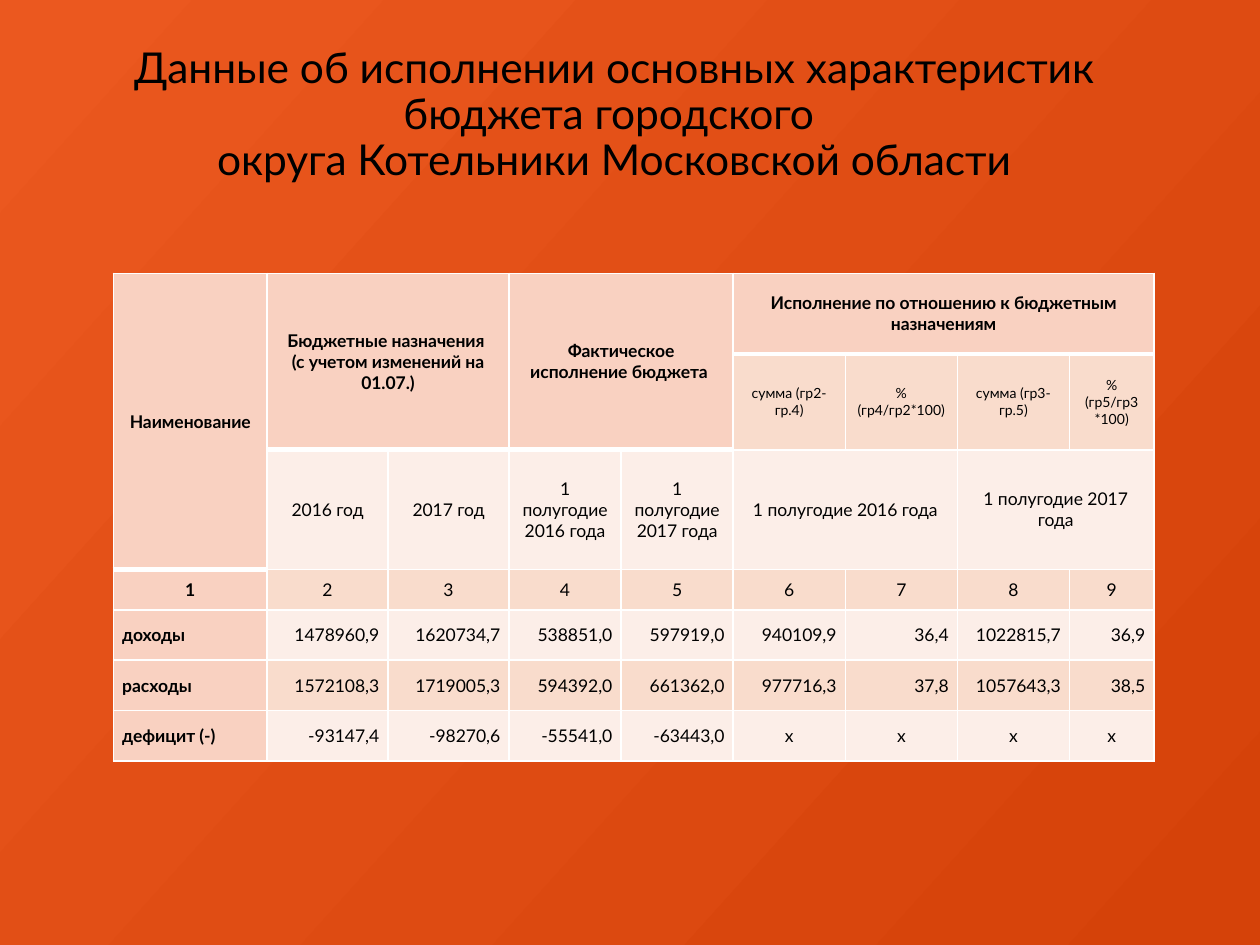
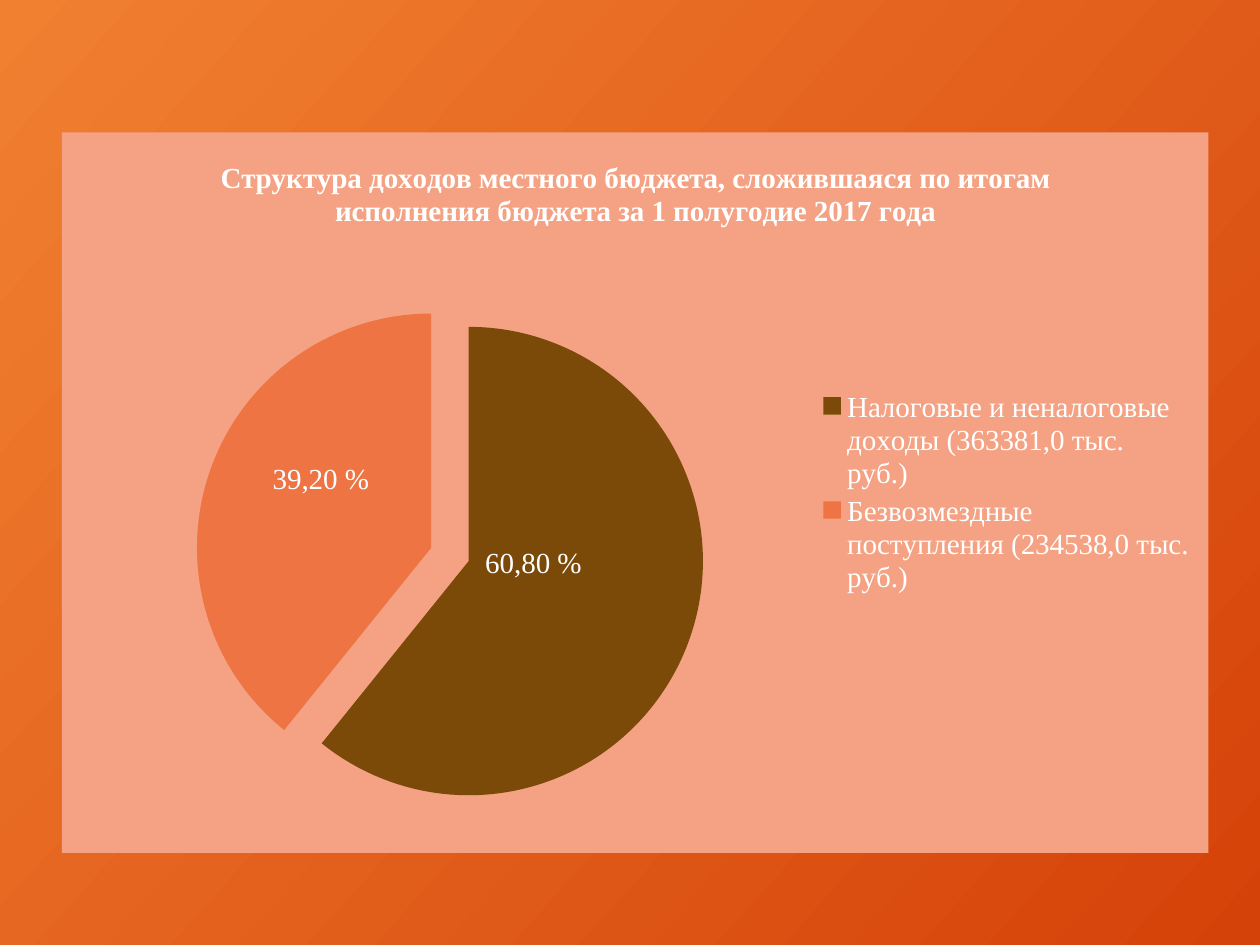
from lxml import etree
from pptx import Presentation
from pptx.chart.data import CategoryChartData
from pptx.dml.color import RGBColor
from pptx.enum.chart import XL_CHART_TYPE as ChartType
from pptx.enum.chart import XL_LABEL_POSITION as LabelPosition
from pptx.enum.chart import XL_LEGEND_POSITION as LegendPosition
from pptx.enum.text import MSO_ANCHOR as Anchor
from pptx.enum.text import PP_ALIGN as Align
from pptx.oxml import parse_xml
from pptx.oxml.ns import nsdecls, qn
from pptx.util import Inches, Pt

COLORS = {
    "text": "000000", "light": "FFFFFF", "red": "EB581F", "orange": "F18031",
    "deep": "D54209", "head": "F9D1C1", "band": "F9DCCC", "pale": "FCEEE8",
    "panel": "F4A283", "tax": "7B4A08", "grants": "EE7444",
}
SANS, SERIF = "Lato", "Times New Roman"
CHART_SIZE = 16.6


def rgb(name):
    return RGBColor.from_string(COLORS[name])


def chart_element(tag, **attributes):
    element = etree.Element(qn(f"c:{tag}"))
    for name, value in attributes.items():
        element.set(name, str(value))
    return element


def manual_layout(**values):
    layout = chart_element("layout")
    manual = etree.SubElement(layout, qn("c:manualLayout"))
    for name, value in values.items():
        manual.append(chart_element(name, val=value))
    return layout


class Deck:
    def __init__(self):
        self.presentation = Presentation()
        self.presentation.slide_width = Inches(10)
        self.presentation.slide_height = Inches(7.5)
        self.slide = None

    def add_slide(self, start_color):
        self.slide = self.presentation.slides.add_slide(self.presentation.slide_layouts[6])
        fill = self.slide.background.fill
        fill.gradient()
        fill.gradient_angle = 318
        for stop, name, position in zip(fill.gradient_stops, (start_color, "deep"), (0, 1)):
            stop.color.rgb = rgb(name)
            stop.position = position

    def style_font(self, font, size, color="text", family=SANS, bold=False):
        font.size = Pt(size)
        font.name = family
        font.bold = bold
        font.color.rgb = rgb(color)

    def add_run(self, paragraph, text, size, **style):
        run = paragraph.add_run()
        run.text = text
        self.style_font(run.font, size, **style)

    def title(self, lines, left, top, width, height):
        box = self.slide.shapes.add_textbox(*map(Inches, (left, top, width, height)))
        frame = box.text_frame
        frame.word_wrap = True
        frame.vertical_anchor = Anchor.MIDDLE
        paragraph = frame.paragraphs[0]
        paragraph.alignment = Align.CENTER
        paragraph.line_spacing = 0.9
        for index, line in enumerate(lines):
            if index:
                paragraph.add_line_break()
            self.add_run(paragraph, line, 24.3)

    def table(self, left, top, columns, rows):
        frame = self.slide.shapes.add_table(
            len(rows), len(columns), *map(Inches, (left, top, sum(columns), sum(rows))))
        table = frame.table
        for column, width in zip(table.columns, columns):
            column.width = Inches(width)
        for row, height in zip(table.rows, rows):
            row.height = Inches(height)
        return table

    def borders(self, cell, bottom):
        properties = cell._tc.get_or_add_tcPr()
        for side, width in (("L", 1), ("R", 1), ("T", 1), ("B", bottom)):
            properties.append(parse_xml(
                f'<a:ln{side} {nsdecls("a")} w="{Pt(width)}"><a:solidFill>'
                f'<a:srgbClr val="{COLORS["light"]}"/></a:solidFill></a:ln{side}>'))

    def cell(self, cell, text, fill, size=10, align=Align.CENTER, bold=False, bottom=1):
        self.borders(cell, bottom)
        cell.fill.solid()
        cell.fill.fore_color.rgb = rgb(fill)
        cell.vertical_anchor = Anchor.MIDDLE
        cell.margin_left = cell.margin_right = Inches(0.07)
        cell.margin_top = cell.margin_bottom = 0
        frame = cell.text_frame
        for index, line in enumerate(text.split("\n") if text else []):
            paragraph = frame.add_paragraph() if index else frame.paragraphs[0]
            paragraph.alignment = align
            self.add_run(paragraph, line, size, bold=bold)

    def pie(self, title, slices, left, top, width, height):
        data = CategoryChartData()
        data.categories = [part["name"] for part in slices]
        data.add_series("Series 1", [part["value"] for part in slices])
        chart = self.slide.shapes.add_chart(
            ChartType.PIE, *map(Inches, (left, top, width, height)), data).chart
        self.style_font(chart.font, 10, "light")
        chart.element.find(qn("c:txPr")).addprevious(parse_xml(
            f'<c:spPr {nsdecls("c", "a")}><a:solidFill><a:srgbClr val="{COLORS["panel"]}"/>'
            '</a:solidFill><a:ln><a:noFill/></a:ln></c:spPr>'))
        serif = {"size": CHART_SIZE, "color": "light", "family": SERIF}

        chart.has_title = True
        self.add_run(chart.chart_title.text_frame.paragraphs[0], title, bold=True, **serif)
        chart.has_legend = True
        legend = chart.legend
        legend.position = LegendPosition.RIGHT
        legend.include_in_layout = False
        self.style_font(legend.font, **serif)

        area = chart.element.find(".//" + qn("c:plotArea"))
        for layout in area.findall(qn("c:layout")):
            area.remove(layout)
        area.insert(0, manual_layout(
            layoutTarget="inner", xMode="edge", yMode="edge", x=0.15, y=0.27, w=0.41, h=0.65))

        plot = chart.plots[0]
        plot.vary_by_categories = True
        series = plot.series[0]
        labels = series.data_labels
        labels.show_percentage = True
        labels.show_value = False
        labels.number_format = "0.00%"
        labels.number_format_is_linked = False
        self.style_font(labels.font, **serif)
        for index, part in enumerate(slices):
            point = series.points[index]
            point.format.fill.solid()
            point.format.fill.fore_color.rgb = rgb(part["color"])
            point.format.line.fill.background()
            label = point.data_label
            self.add_run(label.text_frame.paragraphs[0], part["label"], **serif)
            label.position = LabelPosition.CENTER
            x, y = part["shift"]
            series._element.findall(".//" + qn("c:dLbl"))[index].find(qn("c:idx")).addnext(
                manual_layout(x=x, y=y))
            if part["explosion"]:
                series._element.findall(qn("c:dPt"))[index].find(qn("c:spPr")).addprevious(
                    chart_element("explosion", val=part["explosion"]))


def execution_slide(deck):
    deck.add_slide("red")
    deck.title(["Данные об исполнении основных характеристик бюджета городского ",
                "округа Котельники Московской области"], 0.5, 0.37, 8.75, 1.1)

    half_2016, half_2017 = "1 полугодие 2016 года", "1 полугодие 2017 года"
    rows = [
        ["Наименование", "Бюджетные назначения \n(с учетом изменений на 01.07.)", "",
         "Фактическое исполнение бюджета ", "",
         "Исполнение по отношению к бюджетным назначениям", "", "", ""],
        ["", "", "", "", "", "сумма (гр2- гр.4)", "% (гр4/гр2*100)",
         "сумма (гр3- гр.5)", "% (гр5/гр3 *100)"],
        ["", "2016 год", "2017 год", half_2016, half_2017, half_2016, "", half_2017, ""],
        [str(number) for number in range(1, 10)],
        ["доходы", "1478960,9", "1620734,7", "538851,0", "597919,0",
         "940109,9", "36,4", "1022815,7", "36,9"],
        ["расходы", "1572108,3", "1719005,3", "594392,0", "661362,0",
         "977716,3", "37,8", "1057643,3", "38,5"],
        ["дефицит (-)", "-93147,4", "-98270,6", "-55541,0", "-63443,0", "х", "х", "х", "х"],
    ]
    header_depths = [3] + [2] * 4 + [1] * 4
    merges = [(0, 0, 2, 0), (0, 1, 1, 2), (0, 3, 1, 4), (0, 5, 0, 8), (2, 5, 2, 6), (2, 7, 2, 8)]

    table = deck.table(0.9, 2.17, [1.22] + [0.96] * 2 + [0.89] * 5 + [0.67],
                       [0.64, 0.76, 0.95, 0.32] + [0.4] * 3)
    for top, left, bottom, right in merges:
        table.cell(top, left).merge(table.cell(bottom, right))
    for row, texts in enumerate(rows):
        for column, text in enumerate(texts):
            is_header = row < header_depths[column]
            is_head = is_header or column == 0
            align = Align.CENTER
            if row > 3 and text != "х":
                align = Align.RIGHT if column else Align.LEFT
            deck.cell(table.cell(row, column), text,
                      "head" if is_head else "band" if row % 2 else "pale",
                      size=8 if row == 1 else 10, align=align, bold=is_head,
                      bottom=3 if is_header else 1)


def income_slide(deck):
    deck.add_slide("orange")
    slices = [
        {"name": "Налоговые и неналоговые доходы (363381,0 тыс. руб.)", "value": 60.8,
         "label": "60,80 %", "color": "tax", "shift": (-0.04, -0.05), "explosion": 0},
        {"name": "Безвозмездные поступления (234538,0 тыс. руб.)", "value": 39.2,
         "label": "39,20 %", "color": "grants", "shift": (0, -0.04), "explosion": 17},
    ]
    deck.pie("Структура доходов местного бюджета, сложившаяся по итогам "
             "исполнения бюджета за 1 полугодие 2017 года", slices, 0.49, 1.05, 9.1, 5.72)


def main():
    deck = Deck()
    execution_slide(deck)
    income_slide(deck)
    deck.presentation.save("out.pptx")


if __name__ == "__main__":
    main()
